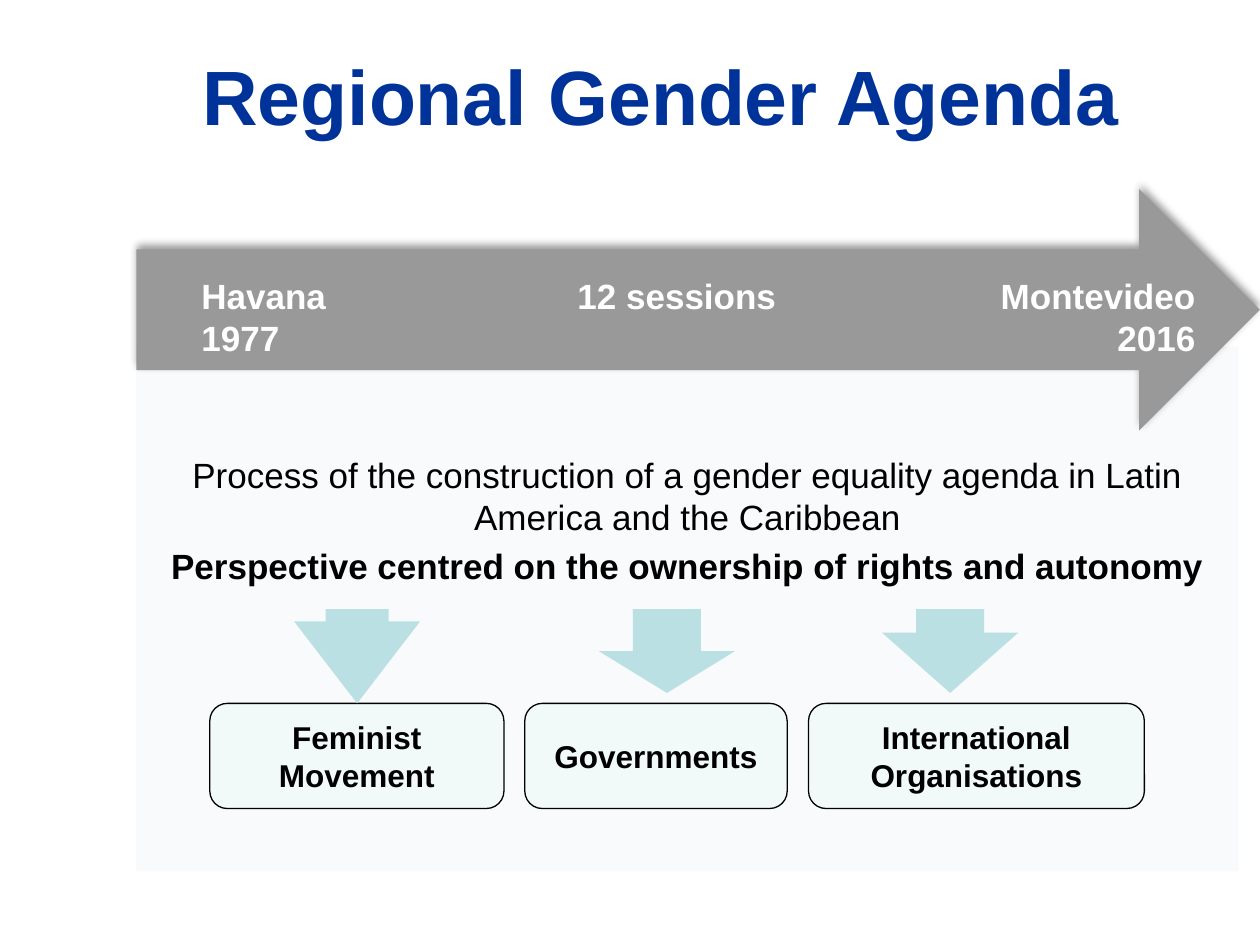
"""Build the Regional Gender Agenda slide."""
from lxml import etree
from pptx import Presentation
from pptx.dml.color import RGBColor
from pptx.enum.shapes import MSO_SHAPE as Kind
from pptx.enum.text import MSO_ANCHOR as Anchor, PP_ALIGN as Align
from pptx.oxml.ns import qn
from pptx.util import Cm, Pt


def style(para, size, tint, bold=True, align=Align.CENTER):
    para.alignment = align
    for run in para.runs:
        font = run.font
        font.name, font.size, font.bold = "Arial", Pt(size), bold
        font.color.rgb = RGBColor.from_string(tint)


def draw(kind, box, fill, line=None):
    shape = slide.shapes.add_shape(kind, *map(Cm, box))
    shape.shadow.inherit = False
    shape.fill.solid()
    shape.fill.fore_color.rgb = RGBColor.from_string(fill)
    if line:
        shape.line.color.rgb = RGBColor.from_string(line)
        shape.line.width = Pt(0.75)
    else:
        shape.line.fill.background()
    return shape


deck = Presentation()
deck.slide_width, deck.slide_height = Cm(25.4), Cm(19.05)
slide = deck.slides.add_slide(deck.slide_layouts[5])

title = slide.shapes.title
title.left, title.top, title.width, title.height = map(Cm, (1.9, 0.71, 22.86, 2.67))
frame = title.text_frame
frame.text = "Regional Gender Agenda"
frame.vertical_anchor = Anchor.TOP
frame.margin_top = Cm(0.26)
style(frame.paragraphs[0], 44, "003399")

panel = draw(Kind.RECTANGLE, (2.75, 6.99, 22.22, 10.58), "DCE6F2")
color = panel.fill._xPr.find(".//" + qn("a:srgbClr"))
etree.SubElement(color, qn("a:alpha"), val="18000")
frame = panel.text_frame
frame.word_wrap = True
frame.vertical_anchor = Anchor.TOP
frame.margin_top = Cm(2.16)
lead = frame.paragraphs[0]
lead.text = "Process of the construction of a gender equality agenda in Latin America and the Caribbean"
style(lead, 20, "000000", bold=False)
focus = frame.add_paragraph()
focus.text = "Perspective centred on the ownership of rights and autonomy"
focus.space_before = Pt(4)
style(focus, 20, "000000")

band = draw(Kind.RIGHT_ARROW, (2.75, 3.81, 22.65, 4.87), "999999")
glow = etree.SubElement(
    band._element.spPr.find(qn("a:effectLst")), qn("a:outerShdw"),
    blurRad=str(Pt(4)), dist=str(Pt(3)), dir="16200000", rotWithShape="0")
black = etree.SubElement(glow, qn("a:srgbClr"), val="000000")
etree.SubElement(black, qn("a:alpha"), val="40000")

for text, left, width, high, align in (
        ("Havana 1977", 3.81, 4.45, 1.96, Align.LEFT),
        ("12 sessions", 11, 5.29, 1.11, Align.CENTER),
        ("Montevideo 2016", 18.42, 5.93, 1.96, Align.RIGHT)):
    label = slide.shapes.add_textbox(Cm(left), Cm(5.4), Cm(width), Cm(high))
    frame = label.text_frame
    frame.word_wrap = True
    frame.text = text
    style(frame.paragraphs[0], 20, "FFFFFF", align=align)

for text, left, width in (
        ("Feminist Movement", 4.23, 5.93),
        ("Governments", 10.58, 5.29),
        ("International Organisations", 16.3, 6.77)):
    actor = draw(Kind.ROUNDED_RECTANGLE, (left, 14.18, width, 2.12), "F1F9F9", "000000")
    frame = actor.text_frame
    frame.word_wrap = True
    frame.vertical_anchor = Anchor.MIDDLE
    frame.text = text
    style(frame.paragraphs[0], 18, "000000")

for left, width, high, head in (
        (5.93, 2.54, 1.9, 0.87), (12.07, 2.75, 1.69, 0.5), (17.78, 2.75, 1.69, 0.72)):
    arrow = draw(Kind.DOWN_ARROW, (left, 12.28, width, high), "BBE0E3")
    arrow.adjustments[1] = head

deck.save("out.pptx")
